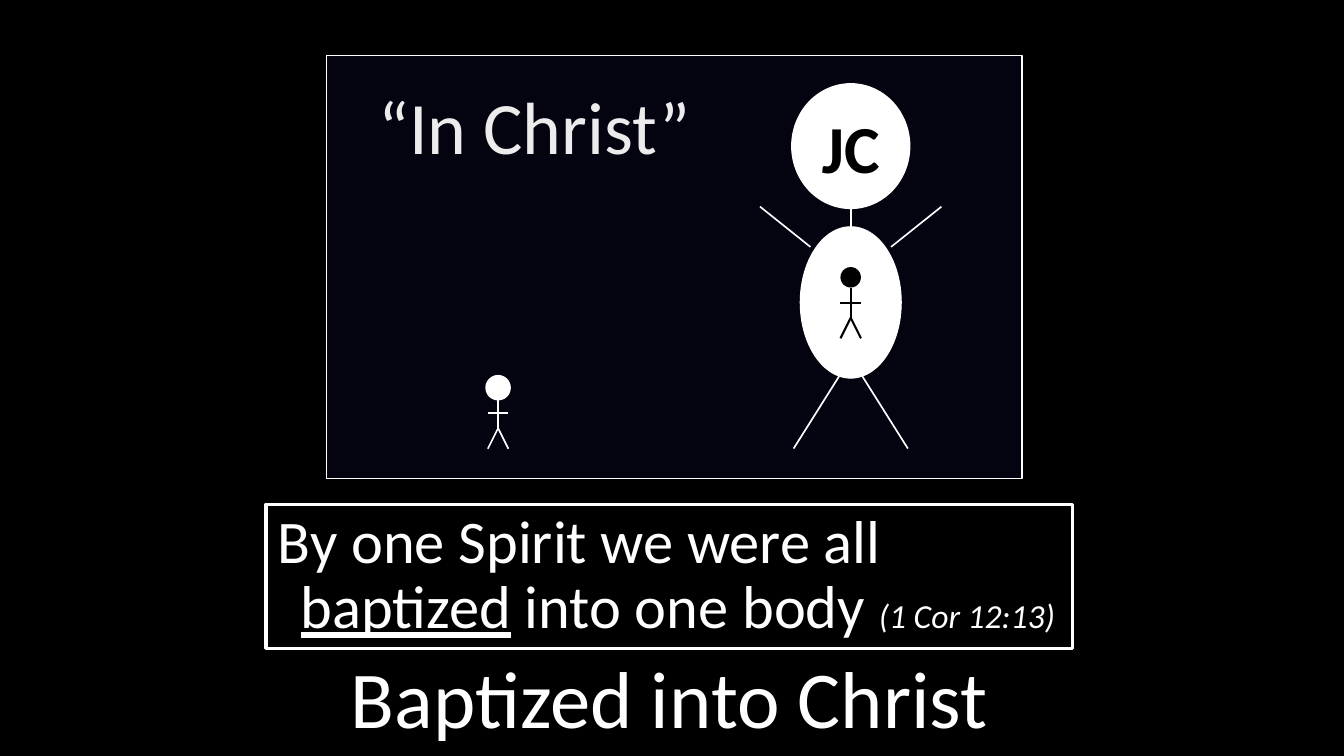
from dataclasses import dataclass

import pptx
import pptx.dml.color
import pptx.enum.shapes
import pptx.enum.text
import pptx.oxml.ns
import pptx.util
from lxml import etree

Pt = pptx.util.Pt
SHAPES = pptx.enum.shapes.MSO_SHAPE
ALIGN = pptx.enum.text.PP_ALIGN
ANCHOR = pptx.enum.text.MSO_ANCHOR


@dataclass(frozen=True)
class Theme:
    font: str = "Calibri"
    white: str = "FFFFFF"
    black: str = "000000"
    panel: str = "040410"
    soft_white: str = "ECECEC"
    title: int = 48
    heading: int = 44
    initials: int = 40
    verse: int = 36
    reference: int = 20


THEME = Theme()


def rgb(color):
    return pptx.dml.color.RGBColor.from_string(color)


def add_outlined(slide, kind, left, top, width, height, fill, line=None, weight=0.75):
    """Add a filled preset shape, outlined when a line colour is given."""
    shape = slide.shapes.add_shape(kind, Pt(left), Pt(top), Pt(width), Pt(height))
    shape.shadow.inherit = False
    shape.fill.solid()
    shape.fill.fore_color.rgb = rgb(fill)
    if line:
        shape.line.color.rgb = rgb(line)
        shape.line.width = Pt(weight)
    else:
        shape.line.fill.background()
    return shape


def add_line(slide, start, end, color, weight=1):
    connector = slide.shapes.add_connector(
        pptx.enum.shapes.MSO_CONNECTOR.STRAIGHT, *map(Pt, start + end))
    connector.line.color.rgb = rgb(color)
    connector.line.width = Pt(weight)
    etree.SubElement(connector._element.spPr, pptx.oxml.ns.qn("a:effectLst"))


def add_textbox(slide, left, top, width, height):
    return slide.shapes.add_textbox(Pt(left), Pt(top), Pt(width), Pt(height))


def write(shape, text, *, size, color=THEME.white, bold=None, italic=None,
          underline=None, align=ALIGN.LEFT, anchor=ANCHOR.TOP, hanging=0, spacing=None):
    """Append one formatted run to the paragraph of a shape."""
    frame = shape.text_frame
    frame.word_wrap = True
    frame.vertical_anchor = anchor
    paragraph = frame.paragraphs[0]
    paragraph.alignment = align
    if spacing:
        paragraph.line_spacing = spacing
    if hanging:
        properties = paragraph._p.get_or_add_pPr()
        properties.set("marL", str(Pt(hanging)))
        properties.set("indent", str(-Pt(hanging)))
    run = paragraph.add_run()
    run.text = text
    font = run.font
    font.name, font.size, font.color.rgb = THEME.font, Pt(size), rgb(color)
    font.bold, font.italic, font.underline = bold, italic, underline


def add_person(slide, center, top, color, head_line=None, leg_weight=1):
    """Draw a small stick figure hanging from the top of its head."""
    reach, neck, arms, hip, feet = 6.1, 12.2, 21.2, 30.2, 42.4
    add_outlined(slide, SHAPES.OVAL, center - reach, top, 2 * reach, neck,
                 color, head_line, 3)
    add_line(slide, (center, top + neck), (center, top + hip), color)
    for side in (reach, -reach):
        add_line(slide, (center, top + hip), (center + side, top + feet),
                 color, leg_weight)
    add_line(slide, (center - reach, top + arms), (center + reach, top + arms), color)


def add_christ(slide, center):
    """Draw the large figure whose body encloses a small person."""
    shoulder, hip, foot = 123, 213, 267
    add_outlined(slide, SHAPES.OVAL, center - 34, 51, 68, 72,
                 THEME.white, THEME.white, 3)
    add_line(slide, (center, shoulder), (center, hip), THEME.white)
    for side in (1, -1):
        add_line(slide, (center, hip), (center + side * 34, foot), THEME.white)
        add_line(slide, (center + side * 54, shoulder), (center + side * 24, 147),
                 THEME.white)
    add_outlined(slide, SHAPES.OVAL, center - 30, 135, 60, 90,
                 THEME.white, THEME.white)
    initials = add_textbox(slide, center - 39, 60, 78, 55.5)
    write(initials, "JC", size=THEME.initials, color=THEME.black, bold=True,
          align=ALIGN.CENTER)
    add_person(slide, center, 159, THEME.black, leg_weight=1.25)


def add_verse(slide):
    verse = add_outlined(slide, SHAPES.ROUNDED_RECTANGLE, 158.4, 300.2, 480.2, 85.7,
                         THEME.black, THEME.white, 2)
    verse.adjustments[0] = 0
    layout = dict(hanging=13.5, spacing=0.9, anchor=ANCHOR.MIDDLE)
    write(verse, "By one Spirit we were all ", size=THEME.verse, **layout)
    write(verse, "baptized", size=THEME.verse, underline=True, **layout)
    write(verse, " into one body ", size=THEME.verse, **layout)
    write(verse, "(1 Cor 12:13)", size=THEME.reference, italic=True, **layout)


def main():
    presentation = pptx.Presentation()
    presentation.slide_width, presentation.slide_height = Pt(800), Pt(450)
    slide = presentation.slides.add_slide(presentation.slide_layouts[6])
    slide.background.fill.solid()
    slide.background.fill.fore_color.rgb = rgb(THEME.black)

    # Title
    title = add_textbox(slide, 5, 387.4, 787, 54.7)
    write(title, "Baptized into Christ", size=THEME.title, align=ALIGN.CENTER,
          anchor=ANCHOR.MIDDLE)

    # Illustration panel
    add_outlined(slide, SHAPES.RECTANGLE, 194.4, 33, 414, 252, THEME.panel, THEME.white)
    add_person(slide, 296.5, 224.7, THEME.white, head_line=THEME.white)
    heading = add_textbox(slide, 218.2, 44.6, 228.2, 59.8)
    write(heading, "“In Christ”", size=THEME.heading, color=THEME.soft_white,
          hanging=27)
    add_christ(slide, 506.4)

    # Verse
    add_verse(slide)
    presentation.save("out.pptx")


if __name__ == "__main__":
    main()
